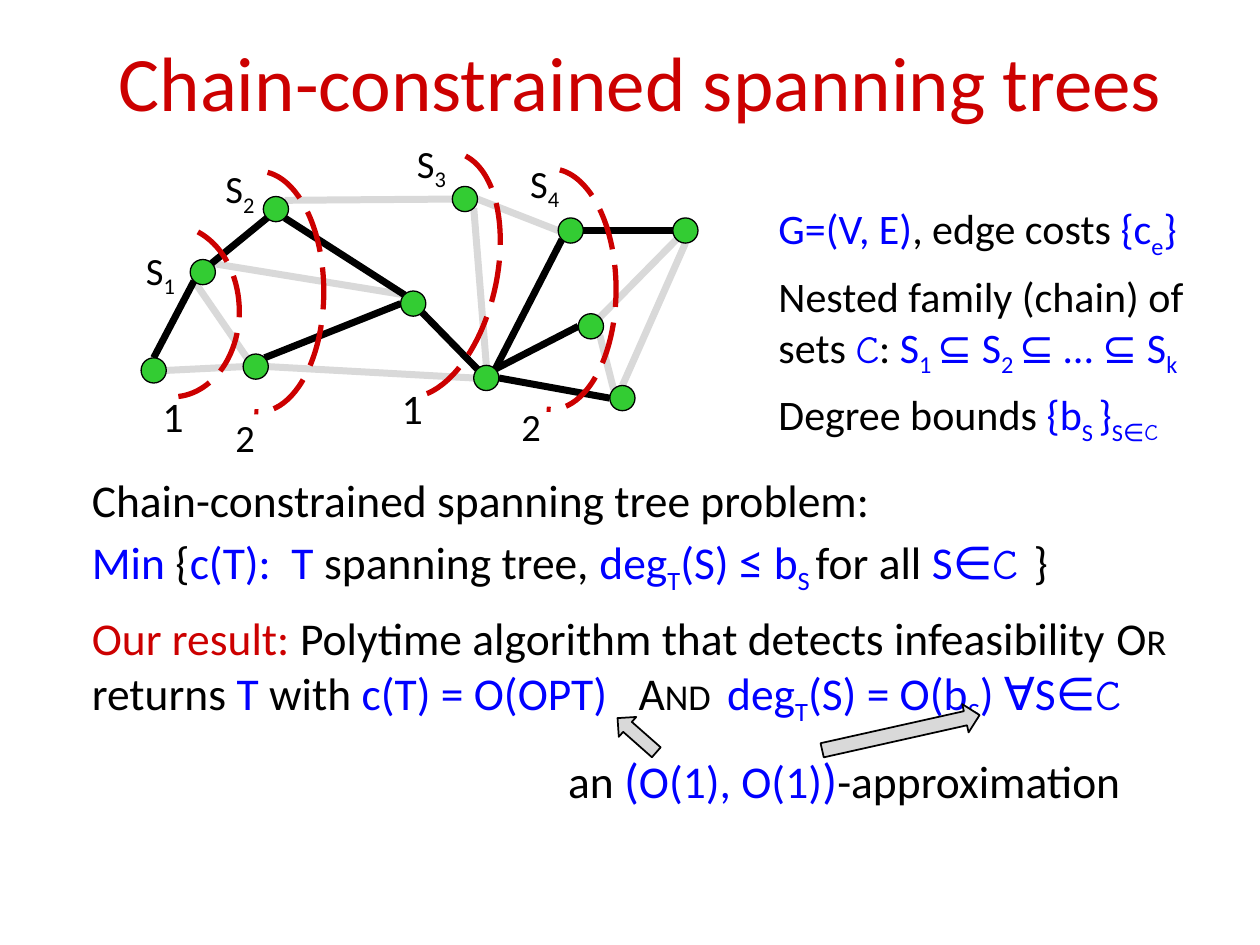
import dataclasses
import functools

import pptx
import pptx.dml.color
import pptx.enum.dml
import pptx.enum.shapes
import pptx.enum.text
import pptx.oxml.ns
import pptx.util
from lxml import etree

COLORS = {"ink": "000000", "red": "CC0000", "blue": "0000FF",
          "gray": "D9D9D9", "green": "33CC33"}
COLUMNS = 100
NODE_SIZE = 2
SHAPES = pptx.enum.shapes.MSO_SHAPE
ALIGN = pptx.enum.text.PP_ALIGN


@dataclasses.dataclass
class Run:
    text: str
    color: str = "ink"
    size: int = 0
    sub: bool = False
    caps: bool = False
    font: str = "Calibri"


blue = functools.partial(Run, color="blue")
sub = functools.partial(Run, color="blue", sub=True)


def chain(size):
    """The script letter that names the family of sets."""
    return blue("C", size=size, font="Comic Neue")


class Board:
    """Draws on one slide; lengths count cells of a square grid 100 columns wide."""

    def __init__(self, prs):
        self.slide = prs.slides.add_slide(prs.slide_layouts[6])
        self.shapes = self.slide.shapes
        self.cell = prs.slide_width / COLUMNS

    def span(self, *cells):
        return [pptx.util.Emu(round(c * self.cell)) for c in cells]

    def color(self, name):
        return pptx.dml.color.RGBColor.from_string(COLORS[name])

    def stroke(self, line, color, width):
        line.color.rgb = self.color(color)
        line.width = pptx.util.Pt(width)

    def text(self, box, paragraphs, size, gaps=(0,), align=ALIGN.LEFT, middle=False):
        frame = self.shapes.add_textbox(*self.span(*box)).text_frame
        frame.word_wrap = True
        if middle:
            frame.vertical_anchor = pptx.enum.text.MSO_ANCHOR.MIDDLE
        else:
            frame.auto_size = pptx.enum.text.MSO_AUTO_SIZE.SHAPE_TO_FIT_TEXT
        for i, (runs, gap) in enumerate(zip(paragraphs, gaps)):
            paragraph = frame.add_paragraph() if i else frame.paragraphs[0]
            paragraph.alignment = align
            paragraph.space_before = pptx.util.Pt(gap)
            for run in runs:
                self.run(paragraph, run, size)

    def run(self, paragraph, spec_run, size):
        piece = paragraph.add_run()
        piece.text = spec_run.text
        piece.font.name = spec_run.font
        piece.font.size = pptx.util.Pt(spec_run.size or size)
        piece.font.color.rgb = self.color(spec_run.color)
        properties = piece._r.get_or_add_rPr()
        if spec_run.sub:
            properties.set("baseline", "-25000")
        if spec_run.caps:
            properties.set("cap", "small")

    def edge(self, start, end, color):
        line = self.shapes.add_connector(pptx.enum.shapes.MSO_CONNECTOR.STRAIGHT,
                                         *self.span(*start, *end))
        self.stroke(line.line, color, 4)
        etree.SubElement(line._element.spPr, pptx.oxml.ns.qn("a:effectLst"))

    def shape(self, kind, box, fill, line, width, turn=0):
        shape = self.shapes.add_shape(kind, *self.span(*box))
        shape.shadow.inherit = False
        shape.rotation = turn
        if fill:
            shape.fill.solid()
            shape.fill.fore_color.rgb = self.color(fill)
        else:
            shape.fill.background()
        self.stroke(shape.line, line, width)
        return shape

    def node(self, x, y):
        half = NODE_SIZE / 2
        self.shape(SHAPES.OVAL, (x - half, y - half, NODE_SIZE, NODE_SIZE),
                   "green", "ink", 0.75)

    def cut(self, box, start, end, turn=0):
        arc = self.shape(SHAPES.ARC, box, None, "red", 3, turn)
        arc.adjustments[0], arc.adjustments[1] = start, end
        arc.line.dash_style = pptx.enum.dml.MSO_LINE.LONG_DASH


NODES = {"a": (12.2, 29.4), "b": (16.1, 21.6), "c": (20.3, 29.1), "d": (21.9, 16.6),
         "e": (32.8, 24.1), "f": (36.9, 15.8), "g": (38.6, 30), "h": (45.3, 18.3),
         "i": (46.9, 25.9), "j": (49.4, 31.6), "k": (54.4, 18.3)}
RIM = {"N": (0, -1), "S": (0, 1), "W": (-1, 0), "E": (1, 0),
       "NW": (-0.7, -0.7), "NE": (0.7, -0.7), "SW": (-0.7, 0.7), "SE": (0.7, 0.7)}
# Each end is a node followed by the side of its rim.
TREE_EDGES = ["eW cNE", "aN bSW", "bNE dSW", "hE kW", "iW gNE",
              "dSE eNW", "eSE gNW", "gE jW", "hSW gNE"]
OTHER_EDGES = ["cW aE", "dNE fW", "fE hW", "jNW iSE", "kS jN",
               "bSW cNW", "bNE eNW", "iNE kSW", "fSE gN", "cE gW"]
CUTS = [((8.4, 17.9, 10.6, 13.6), 172.64, 51.64),
        ((15.4, 13.6, 10.3, 19.1), 164.5, 55.29),
        ((28.8, 11.9, 10.6, 19.8), 164.5, 50.18, 12.7),
        ((38.6, 13.4, 10.3, 19.1), 164.5, 55.29)]
SET_LABELS = [(10.6, 19.1), (16.9, 12.6), (32.1, 10.6), (41.1, 12.2)]
BOUNDS = [("1", 24, 11.9, 30.5), ("2", 22, 17.7, 32.4),
          ("1", 24, 30.9, 29.9), ("2", 22, 40.4, 31.5)]

SETTING = [
    [blue("G=(V, E)"), Run(", edge costs "), blue("{c"), sub("e"), blue("}")],
    [Run("Nested family (chain) of sets "), chain(22), Run(": "), blue("S"), sub("1 "),
     blue("⊆ S"), sub("2 "), blue("⊆ … ⊆ S"), sub("k")],
    [Run("Degree bounds "), blue("{b"), sub("S "), blue("}"), sub("S∈"),
     dataclasses.replace(chain(22), sub=True)],
]
PROBLEM = [
    [Run("Chain-constrained spanning tree problem:")],
    [blue("Min"), Run(" {"), blue("c(T):  T"), Run(" spanning tree, "), blue("deg"),
     sub("T"), blue("(S) "), blue("≤", size=28), blue(" b"), sub("S "),
     Run("for all "), blue("S∈"), chain(24), blue(" ", font="Comic Neue"), Run("}")],
    [Run("Our result: ", "red"), Run("Polytime algorithm that detects infeasibility "),
     Run("Or", caps=True), Run(" returns "), blue("T"), Run(" with "),
     blue("c(T) = O(OPT)   "), Run("And  ", caps=True), blue("deg"), sub("T"),
     blue("(S) = O(b"), sub("S"), blue(") ∀S∈"), chain(24)],
]
APPROXIMATION = [Run("an "), blue("(", size=28), blue("O(1), O(1)"),
                 blue(")", size=28), Run("-approximation")]


def rim_point(end):
    (x, y), (dx, dy) = NODES[end[0]], RIM[end[1:]]
    return x + dx * NODE_SIZE / 2, y + dy * NODE_SIZE / 2


def draw_graph(board):
    for edges, color in ((OTHER_EDGES, "gray"), (TREE_EDGES, "ink")):
        for edge in edges:
            start, end = edge.split()
            board.edge(rim_point(start), rim_point(end), color)
    for center in NODES.values():
        board.node(*center)
    for cut in CUTS:
        board.cut(*cut)
    for number, (x, y) in enumerate(SET_LABELS, 1):
        board.text((x, y, 6.1, 4.7), [[Run("S"), Run(str(number), sub=True)]], 22)
    for bound, size, x, y in BOUNDS:
        board.text((x, y, 5.4, 4.7), [[Run(bound)]], size)


def main():
    prs = pptx.Presentation()
    prs.slide_width, prs.slide_height = pptx.util.Inches(10), pptx.util.Inches(7.5)
    board = Board(prs)
    board.text((6.7, 1.8, 88.3, 9.2), [[Run("Chain-constrained spanning trees", "red")]],
               44, align=ALIGN.CENTER, middle=True)
    draw_graph(board)
    board.text((60.8, 15.6, 37.8, 18.8), SETTING, 24, gaps=(0, 6, 6))
    board.text((6.3, 37, 90.5, 20.3), PROBLEM, 26, gaps=(0, 2, 8))
    board.text((44.1, 59, 48.2, 5.7), [APPROXIMATION], 26)
    for box, turn in (((65.1, 57, 12.8, 2.3), 347.4), ((48.5, 57.3, 4.1, 2.1), 221.4)):
        board.shape(SHAPES.RIGHT_ARROW, box, "gray", "ink", 1, turn)
    prs.save("out.pptx")


if __name__ == "__main__":
    main()
